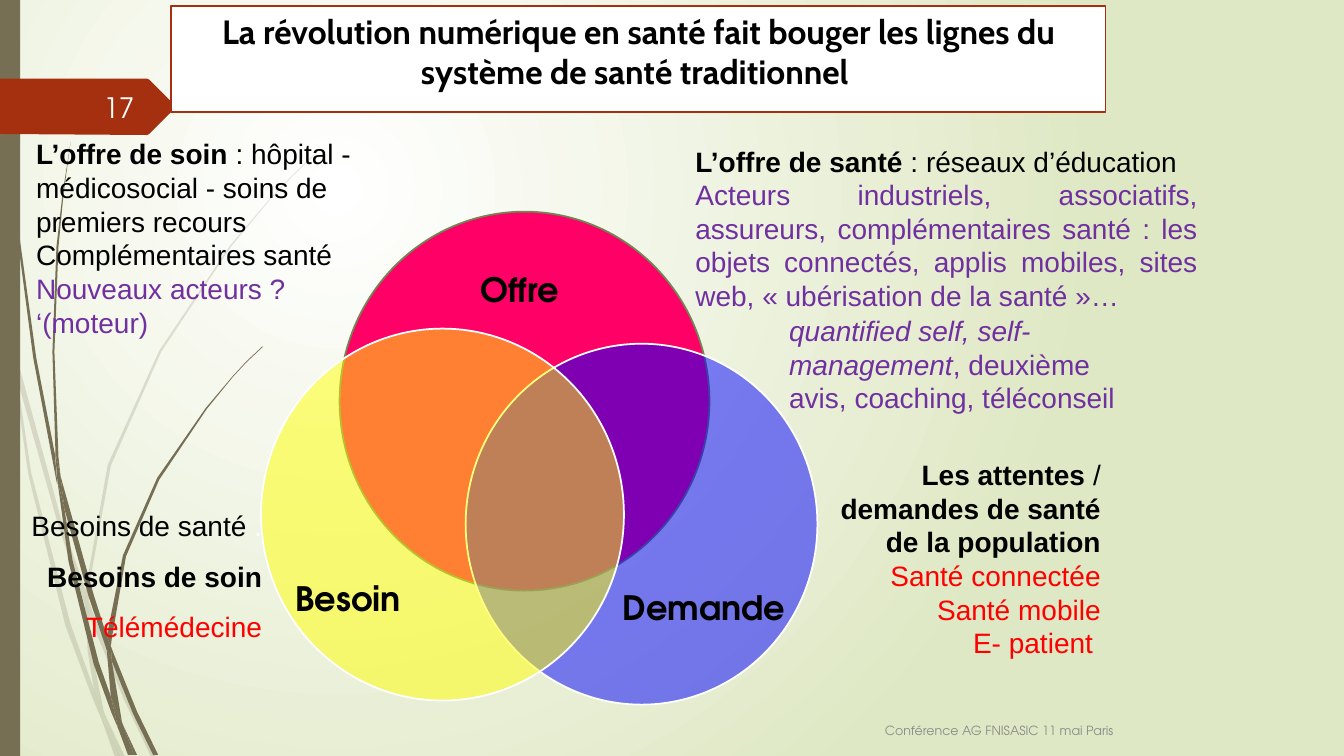
from dataclasses import dataclass, field

import pptx
import pptx.dml.color
import pptx.enum.shapes
import pptx.enum.text
import pptx.oxml.ns
import pptx.util
from lxml import etree

Pt = pptx.util.Pt
RGBColor = pptx.dml.color.RGBColor
Align = pptx.enum.text.PP_ALIGN
Anchor = pptx.enum.text.MSO_ANCHOR
Preset = pptx.enum.shapes.MSO_SHAPE
qn = pptx.oxml.ns.qn

BLACK = RGBColor(0x00, 0x00, 0x00)
WHITE = RGBColor(0xFF, 0xFF, 0xFF)
RED = RGBColor(0xFF, 0x00, 0x00)
PURPLE = RGBColor(0x70, 0x30, 0xA0)
GREY = RGBColor(0x8C, 0x8C, 0x8C)
OFF_WHITE = RGBColor(0xFE, 0xFF, 0xFF)
PALE_GREEN = RGBColor(0xDF, 0xE8, 0xC4)
TAUPE = RGBColor(0x76, 0x6F, 0x54)
RUST = RGBColor(0xA5, 0x30, 0x10)
PINK = RGBColor(0xFF, 0x00, 0x66)
BLUE = RGBColor(0x00, 0x00, 0xFF)
YELLOW = RGBColor(0xFF, 0xFF, 0x00)
MOSS = RGBColor(0x72, 0x86, 0x53)

GRID = Pt(0.72)  # one unit of the outline coordinates
BODY = {"name": "Arial", "size": Pt(20), "bold": False}
TITLE = {"name": "Cabin", "size": Pt(24), "bold": True}
LABEL = {"name": "TeX Gyre Adventor", "size": Pt(24), "bold": True}
NUMBER = {"name": "TeX Gyre Adventor", "size": Pt(20)}
FOOTER = {"name": "TeX Gyre Adventor", "size": Pt(9)}

Box = tuple[float, float, float, float]
Outline = list[tuple[int, int]]


@dataclass
class Run:
    text: str
    color: RGBColor = BLACK
    changes: dict = field(default_factory=dict)


@dataclass
class TextBlock:
    box: Box
    paragraphs: list[list[Run]]
    format: dict = field(default_factory=lambda: BODY)
    align: list = field(default_factory=lambda: [Align.LEFT])
    anchor: Anchor = Anchor.TOP
    insets: Box = (7.2, 3.6, 7.2, 3.6)
    line_spacing: float = 1.0


@dataclass
class Circle:
    box: Box
    fill: RGBColor
    opacity: int
    line: RGBColor


BOLD = {"bold": True}
ITALIC = {"italic": True}
NO_INSETS = (0, 0, 0, 0)

# Grass blades: pale strand behind, solid strand in front
PALE_BLADES: list[Outline] = [
    [(11, 350), (9, 322), (0, 282), (0, 299), (10, 344)],
    [(58, 522), (84, 599), (85, 586), (62, 520), (14, 345), (17, 376)],
    [(92, 607), (88, 596), (88, 610), (123, 694), (150, 751), (155, 751), (127, 692)],
    [(119, 751), (124, 751), (105, 711)],
    [(93, 683), (70, 619), (31, 469), (17, 376), (11, 350), (28, 470), (65, 621),
     (92, 693), (101, 714), (99, 707)],
    [(84, 599), (87, 646), (93, 683), (96, 692), (105, 711), (103, 706), (91, 646),
     (88, 610), (88, 608)],
    [(88, 584), (110, 462), (160, 349), (229, 245), (268, 198), (290, 175), (312, 154),
     (312, 153), (289, 175), (268, 197), (228, 244), (158, 348), (107, 461), (85, 584),
     (85, 586), (88, 596)],
    [(101, 714), (114, 751), (119, 751)],
    [(88, 608), (88, 596), (85, 586), (84, 599)],
    [(96, 692), (93, 683), (99, 707), (101, 714), (119, 751), (105, 711)],
]
SOLID_BLADES: list[Outline] = [
    [(7, 110), (17, 233), (33, 355), (56, 477), (57, 481), (55, 457), (55, 453),
     (36, 355), (19, 232), (8, 109), (5, 48), (4, 0), (3, 0), (4, 48)],
    [(88, 592), (106, 645), (106, 631), (93, 590), (60, 472), (64, 505)],
    [(113, 649), (110, 641), (111, 656), (132, 708), (152, 749), (157, 749), (136, 706)],
    [(110, 691), (98, 657), (72, 556), (64, 505), (57, 477), (68, 557), (93, 659),
     (111, 708), (117, 722), (116, 717)],
    [(60, 472), (58, 453), (54, 349), (58, 245), (63, 193), (70, 141), (62, 193),
     (56, 245), (52, 349), (55, 449)],
    [(133, 749), (136, 749), (122, 719)],
    [(57, 477), (64, 505), (60, 472), (55, 449), (55, 453)],
    [(111, 633), (125, 552), (158, 476), (205, 406), (231, 374), (245, 359), (261, 344),
     (260, 344), (245, 358), (231, 373), (204, 405), (156, 474), (122, 551), (106, 631),
     (110, 641)],
    [(117, 722), (127, 749), (131, 749)],
    [(106, 645), (110, 691), (116, 706), (122, 719), (121, 716), (111, 656), (109, 651)],
    [(106, 645), (109, 651), (111, 656), (110, 641), (106, 631)],
    [(116, 706), (110, 691), (116, 717), (117, 722), (130, 749), (133, 749), (122, 719)],
]
NUMBER_TAG: Outline = [(0, 78), (146, 78), (148, 79), (173, 104), (174, 106),
                       (173, 108), (148, 133), (146, 134), (0, 133)]

CIRCLES = [
    Circle((242.6, 151.2, 264.2, 270.7), PINK, 100, MOSS),
    Circle((332.6, 245.5, 251.3, 257.8), BLUE, 50, WHITE),
    Circle((186.5, 234.7, 259.2, 265.7), YELLOW, 50, WHITE),
]

TEXTS = [
    # Circle labels
    TextBlock((277.9, 195, 193.7, 122), [[Run("Offre ")]], LABEL, [Align.CENTER],
              insets=NO_INSETS, line_spacing=0.9),
    TextBlock((409.7, 312.5, 151.2, 136), [[Run("Demande")]], LABEL, [Align.RIGHT],
              Anchor.BOTTOM, NO_INSETS, 0.9),
    TextBlock((211, 304, 155.5, 138), [[Run("Besoin")]], LABEL, [Align.LEFT],
              Anchor.BOTTOM, NO_INSETS, 0.9),
    # Needs
    TextBlock((0, 347.8, 194.4, 116.6),
              [[Run("Besoins de santé "), Run(".", WHITE)],
               [Run("Besoins de soin", BLACK, BOLD)],
               [Run("Télémédecine", RED)]],
              align=[Align.RIGHT], line_spacing=1.5),
    # Care supply
    TextBlock((18.7, 94.3, 259.2, 177.1),
              [[Run("L’offre de soin", BLACK, BOLD),
                Run(" : hôpital - médicosocial - soins de premiers recours")],
               [Run("Complémentaires santé")],
               [Run("Nouveaux acteurs ?", PURPLE)],
               [Run("‘(moteur)", PURPLE)]]),
    # Expectations
    TextBlock((555.1, 323.3, 238.3, 152.6),
              [[Run("Les attentes ", BLACK, BOLD), Run("/ "),
                Run("demandes de santé ", BLACK, BOLD)],
               [Run("de la population", BLACK, BOLD)],
               [Run("Santé connectée", RED)],
               [Run("Santé mobile", RED)],
               [Run("E- patient ", RED)]],
              align=[Align.RIGHT], insets=(43.2, 3.6, 7.2, 3.6)),
    # Health supply
    TextBlock((489.6, 99.4, 373, 128.2),
              [[Run("L’offre de santé", BLACK, BOLD), Run(" : réseaux d’éducation")],
               [Run("Acteurs industriels, associatifs, assureurs, complémentaires santé : "
                    "les objets connectés, applis mobiles, sites web, "
                    "« ubérisation de la santé »…", PURPLE)]],
              align=[Align.LEFT, Align.JUSTIFY]),
    TextBlock((556.6, 220.3, 256.3, 79.9),
              [[Run("quantified self, self-management", PURPLE, ITALIC),
                Run(", deuxième avis, coaching, téléconseil", PURPLE)]]),
    # Footer and slide number
    TextBlock((202.3, 507.6, 599.8, 28.8), [[Run("Conférence AG FNISASIC 11 mai Paris", GREY)]],
              FOOTER, [Align.RIGHT], Anchor.MIDDLE),
    TextBlock((41.8, 61.9, 61.2, 28.8), [[Run("17", OFF_WHITE)]],
              NUMBER, [Align.RIGHT], Anchor.MIDDLE),
]
TITLE_BLOCK = TextBlock(
    (122.4, 4.3, 667.4, 75.6),
    [[Run("La révolution numérique en santé fait bouger les lignes "
          "du système de santé traditionnel ")]],
    TITLE, [Align.CENTER])


def paint(shape, fill: RGBColor, opacity: int = 100, line: RGBColor | None = None) -> None:
    shape.shadow.inherit = False
    shape.fill.solid()
    shape.fill.fore_color.rgb = fill
    if opacity < 100:
        color = shape.element.spPr.find(qn("a:solidFill")).find(qn("a:srgbClr"))
        etree.SubElement(color, qn("a:alpha")).set("val", str(opacity * 1000))
    if line is None:
        shape.line.fill.background()
    else:
        shape.line.color.rgb = line
        shape.line.width = Pt(1.25)


def draw_outline(shapes, points: Outline, fill: RGBColor, opacity: int = 100) -> None:
    builder = shapes.build_freeform(*points[0], scale=GRID)
    builder.add_line_segments(points[1:], close=True)
    paint(builder.convert_to_shape(), fill, opacity)


def draw_preset(shapes, kind: Preset, box: Box, fill: RGBColor, opacity: int = 100,
                line: RGBColor | None = None):
    shape = shapes.add_shape(kind, *map(Pt, box))
    paint(shape, fill, opacity, line)
    return shape


def write_text(shape, block: TextBlock) -> None:
    frame = shape.text_frame
    frame.word_wrap = True
    frame.vertical_anchor = block.anchor
    for side, inset in zip(("left", "top", "right", "bottom"), block.insets):
        setattr(frame, f"margin_{side}", Pt(inset))
    for index, runs in enumerate(block.paragraphs):
        paragraph = frame.add_paragraph() if index else frame.paragraphs[0]
        paragraph.alignment = block.align[min(index, len(block.align) - 1)]
        paragraph.line_spacing = block.line_spacing
        for part in runs:
            run = paragraph.add_run()
            run.text = part.text
            run.font.color.rgb = part.color
            for name, value in (block.format | part.changes).items():
                setattr(run.font, name, value)


def paint_background(slide) -> None:
    fill = slide.background.fill
    fill.gradient()
    for stop, position, color in zip(fill.gradient_stops, (0, 1), (WHITE, PALE_GREEN)):
        stop.position = position
        stop.color.rgb = color
    gradient = slide.element.find(".//" + qn("a:gradFill"))
    linear = gradient.find(qn("a:lin"))
    circle = etree.Element(qn("a:path"), {"path": "circle"})
    etree.SubElement(circle, qn("a:fillToRect"),
                     {"l": "50000", "t": "50000", "r": "100000", "b": "100000"})
    gradient.replace(linear, circle)


def main() -> None:
    presentation = pptx.Presentation()
    presentation.slide_width, presentation.slide_height = Pt(960), Pt(540)
    slide = presentation.slides.add_slide(presentation.slide_layouts[6])
    shapes = slide.shapes
    paint_background(slide)

    # Side decoration
    for blades, opacity in ((PALE_BLADES, 20), (SOLID_BLADES, 100)):
        for blade in blades:
            draw_outline(shapes, blade, TAUPE, opacity)
    draw_preset(shapes, Preset.RECTANGLE, (0, 0, 14.4, 540), TAUPE)
    draw_outline(shapes, NUMBER_TAG, RUST)

    # Title
    title = draw_preset(shapes, Preset.RECTANGLE, TITLE_BLOCK.box, WHITE, line=RUST)
    write_text(title, TITLE_BLOCK)

    # Overlapping circles and texts
    for circle in CIRCLES:
        draw_preset(shapes, Preset.OVAL, circle.box, circle.fill, circle.opacity, circle.line)
    for block in TEXTS:
        write_text(shapes.add_textbox(*map(Pt, block.box)), block)

    presentation.save("out.pptx")


if __name__ == "__main__":
    main()
